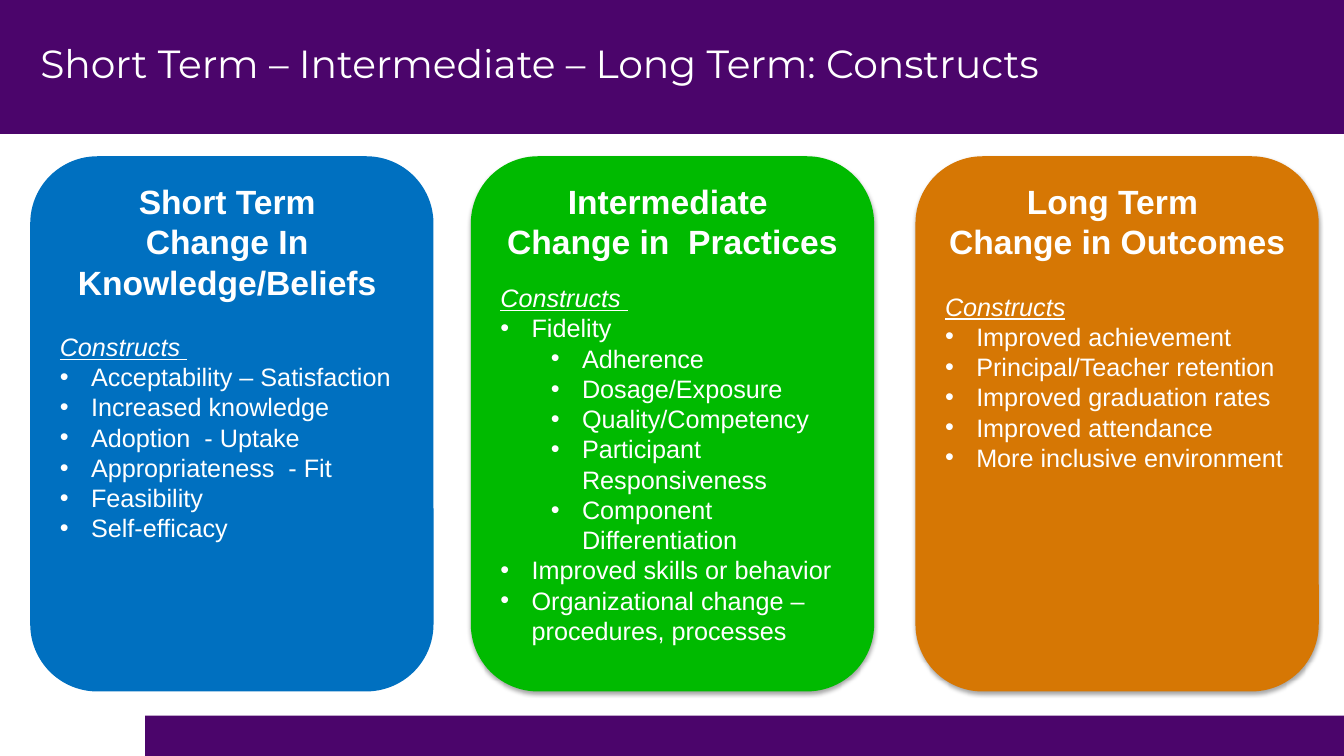
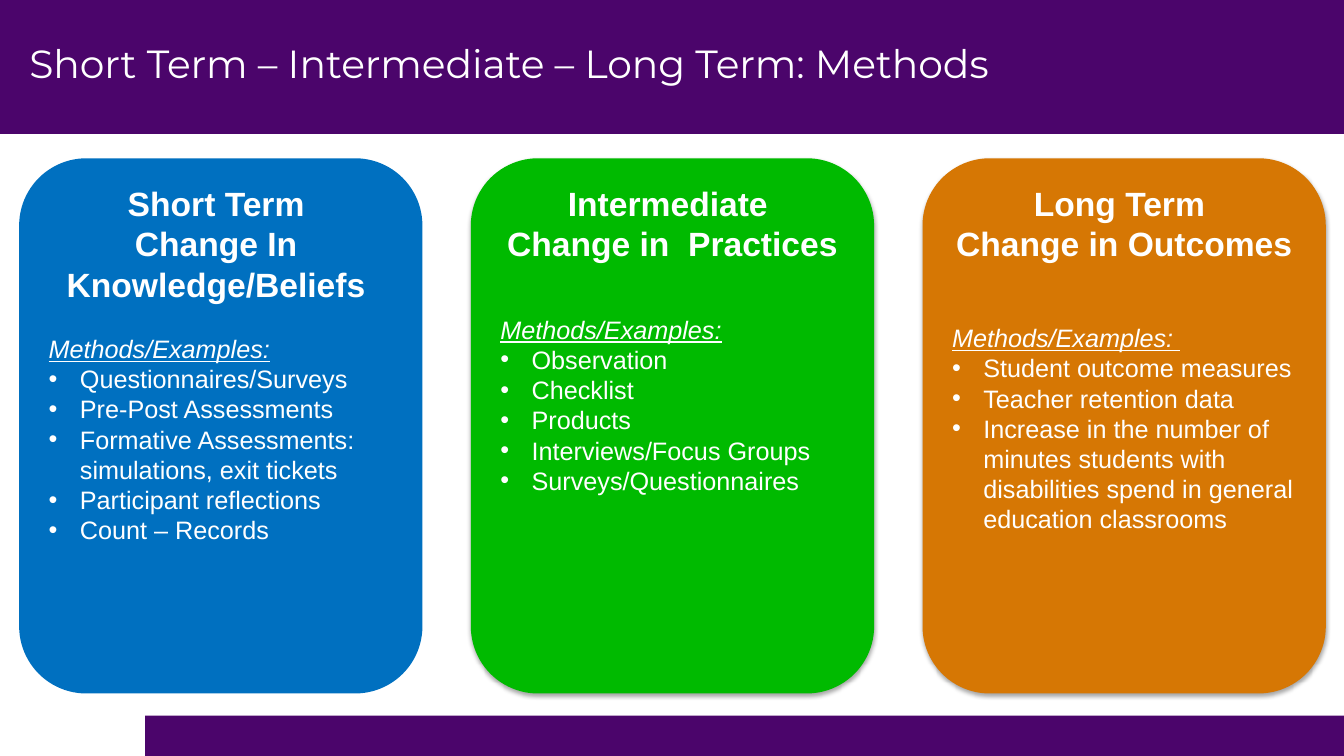
"""Build two slides that set out short, intermediate and long term change."""
import dataclasses
import typing

import lxml.etree
import pptx
import pptx.dml.color
import pptx.enum.shapes
import pptx.enum.text
import pptx.oxml.ns
import pptx.util

SCALE = 9144
SHAPE = pptx.enum.shapes.MSO_SHAPE
ALIGN = pptx.enum.text.PP_ALIGN
ANCHOR = pptx.enum.text.MSO_ANCHOR
SIZING = pptx.enum.text.MSO_AUTO_SIZE
qn = pptx.oxml.ns.qn


@dataclasses.dataclass(frozen=True)
class Theme:
    band: str = "4B056B"
    short: str = "0070C0"
    middle: str = "00BA00"
    long: str = "D67704"
    text: str = "FFFFFF"
    title: dict = dataclasses.field(
        default_factory=lambda: {"name": "Montserrat", "size": pptx.util.Pt(28)})
    head: dict = dataclasses.field(
        default_factory=lambda: {"name": "Arial", "size": pptx.util.Pt(24), "bold": True})
    body: dict = dataclasses.field(
        default_factory=lambda: {"name": "Arial", "size": pptx.util.Pt(18), "bold": False})

    @property
    def label(self) -> dict:
        return {**self.body, "italic": True, "underline": True}


class Box(typing.NamedTuple):
    left: int
    top: int
    width: int
    height: int


class Term(typing.NamedTuple):
    lines: tuple[str, ...]
    fill: str
    shadow: bool


class Item(typing.NamedTuple):
    text: str
    level: int = 0


class Panel(typing.NamedTuple):
    term: Term
    left: int
    gap: int
    label: str
    items: tuple[Item, ...]


class Page(typing.NamedTuple):
    title: str
    left: int
    top: int
    panels: tuple[Panel, ...]


THEME = Theme()
SIZE = (1333, 750)
BANDS = (Box(0, 0, 1333, 133), Box(144, 710, 1189, 40))
PANEL = (400, 531)
INDENT = 31
STEP = 50

SHORT = Term(("Short Term ", "Change In  Knowledge/Beliefs "), THEME.short, False)
MIDDLE = Term(("Intermediate ", "Change in  Practices"), THEME.middle, True)
LONG = Term(("Long Term ", "Change in Outcomes"), THEME.long, True)


def items(*texts: str, level: int = 0) -> tuple[Item, ...]:
    return tuple(Item(text, level) for text in texts)


PAGES = (
    Page("Short Term – Intermediate – Long Term: Constructs", 30, 155, (
        Panel(SHORT, 30, 21, "Constructs ", items(
            "Acceptability – Satisfaction", "Increased knowledge", "Adoption  - Uptake",
            "Appropriateness  - Fit", "Feasibility", "Self-efficacy")),
        Panel(MIDDLE, 467, 15, "Constructs ", items("Fidelity") + items(
            "Adherence", "Dosage/Exposure", "Quality/Competency",
            "Participant Responsiveness", "Component Differentiation", level=1) + items(
            "Improved skills or behavior", "Organizational change –procedures, processes")),
        Panel(LONG, 908, 21, "Constructs", items(
            "Improved achievement", "Principal/Teacher retention",
            "Improved graduation rates", "Improved attendance",
            "More inclusive environment")),
    )),
    Page("Short Term – Intermediate – Long Term: Methods", 19, 157, (
        Panel(SHORT, 19, 21, "Methods/Examples:", items(
            "Questionnaires/Surveys", "Pre-Post Assessments",
            "Formative Assessments: simulations, exit tickets",
            "Participant reflections", "Count – Records")),
        Panel(MIDDLE, 467, 36, "Methods/Examples:", items(
            "Observation", "Checklist", "Products", "Interviews/Focus Groups",
            "Surveys/Questionnaires")),
        Panel(LONG, 915, 42, "Methods/Examples: ", items(
            "Student outcome measures", "Teacher retention data",
            "Increase in the number of minutes students with disabilities "
            "spend in general education classrooms")),
    )),
)


def px(count: int) -> pptx.util.Emu:
    return pptx.util.Emu(count * SCALE)


def color(code: str) -> pptx.dml.color.RGBColor:
    return pptx.dml.color.RGBColor.from_string(code)


def apply(target: typing.Any, values: dict) -> None:
    for name, value in values.items():
        setattr(target, name, value)


def write(par: typing.Any, text: str, style: dict) -> None:
    run = par.add_run()
    run.text = text
    apply(run.font, style)
    run.font.color.rgb = color(THEME.text)


def block(slide: typing.Any, kind: typing.Any, box: Box, fill: str) -> typing.Any:
    shape = slide.shapes.add_shape(kind, *map(px, box))
    shape.shadow.inherit = False
    shape.fill.solid()
    shape.fill.fore_color.rgb = color(fill)
    shape.line.fill.background()
    return shape


def shade(shape: typing.Any) -> None:
    effects = shape.element.spPr.find(qn("a:effectLst"))
    outer = lxml.etree.SubElement(
        effects, qn("a:outerShdw"), blurRad=str(pptx.util.Pt(3.1)),
        dist=str(pptx.util.Pt(1.8)), dir="5400000", rotWithShape="0")
    tint = lxml.etree.SubElement(outer, qn("a:srgbClr"), val="000000")
    lxml.etree.SubElement(tint, qn("a:alpha"), val="35000")


def bullet(par: typing.Any, level: int) -> None:
    par.level = level
    props = par._p.get_or_add_pPr()
    props.set("marL", str(px(INDENT + level * STEP)))
    props.set("indent", str(px(-INDENT)))
    lxml.etree.SubElement(props, qn("a:buFont"), typeface="Arial")
    lxml.etree.SubElement(props, qn("a:buChar"), char="•")


def draw_panel(slide: typing.Any, panel: Panel, top: int) -> None:
    shape = block(slide, SHAPE.ROUNDED_RECTANGLE, Box(panel.left, top, *PANEL),
                  panel.term.fill)
    if panel.term.shadow:
        shade(shape)
    frame = shape.text_frame
    apply(frame, {"word_wrap": True, "vertical_anchor": ANCHOR.TOP})
    first, *rest = panel.term.lines
    head = frame.paragraphs[0]
    for par, line in [(head, first)] + [(frame.add_paragraph(), text) for text in rest]:
        par.alignment = ALIGN.CENTER
        write(par, line, THEME.head)
    label = frame.add_paragraph()
    apply(label, {"alignment": ALIGN.LEFT, "space_before": pptx.util.Pt(panel.gap)})
    write(label, panel.label, THEME.label)
    for item in panel.items:
        par = frame.add_paragraph()
        par.alignment = ALIGN.LEFT
        bullet(par, item.level)
        write(par, item.text, THEME.body)


def draw_title(slide: typing.Any, page: Page) -> None:
    title = slide.shapes.title
    apply(title, dict(zip(("left", "top", "width", "height"),
                          map(px, Box(page.left, 0, 1200, 125)))))
    frame = title.text_frame
    apply(frame, {"word_wrap": True, "auto_size": SIZING.NONE,
                  "vertical_anchor": ANCHOR.MIDDLE})
    frame.paragraphs[0].alignment = ALIGN.LEFT
    write(frame.paragraphs[0], page.title, THEME.title)


def share_bands(slide: typing.Any) -> None:
    tree = slide.slide_layout.shapes.element
    for spot, box in enumerate(BANDS, start=2):
        tree.insert(spot, block(slide, SHAPE.RECTANGLE, box, THEME.band).element)


def main() -> None:
    deck = pptx.Presentation()
    apply(deck, dict(zip(("slide_width", "slide_height"), map(px, SIZE))))
    layout = deck.slide_layouts.get_by_name("Title Only")
    for spot, page in enumerate(PAGES):
        slide = deck.slides.add_slide(layout)
        if spot == 0:
            share_bands(slide)
        draw_title(slide, page)
        for panel in page.panels:
            draw_panel(slide, panel, page.top)
    deck.save("out.pptx")


if __name__ == "__main__":
    main()
